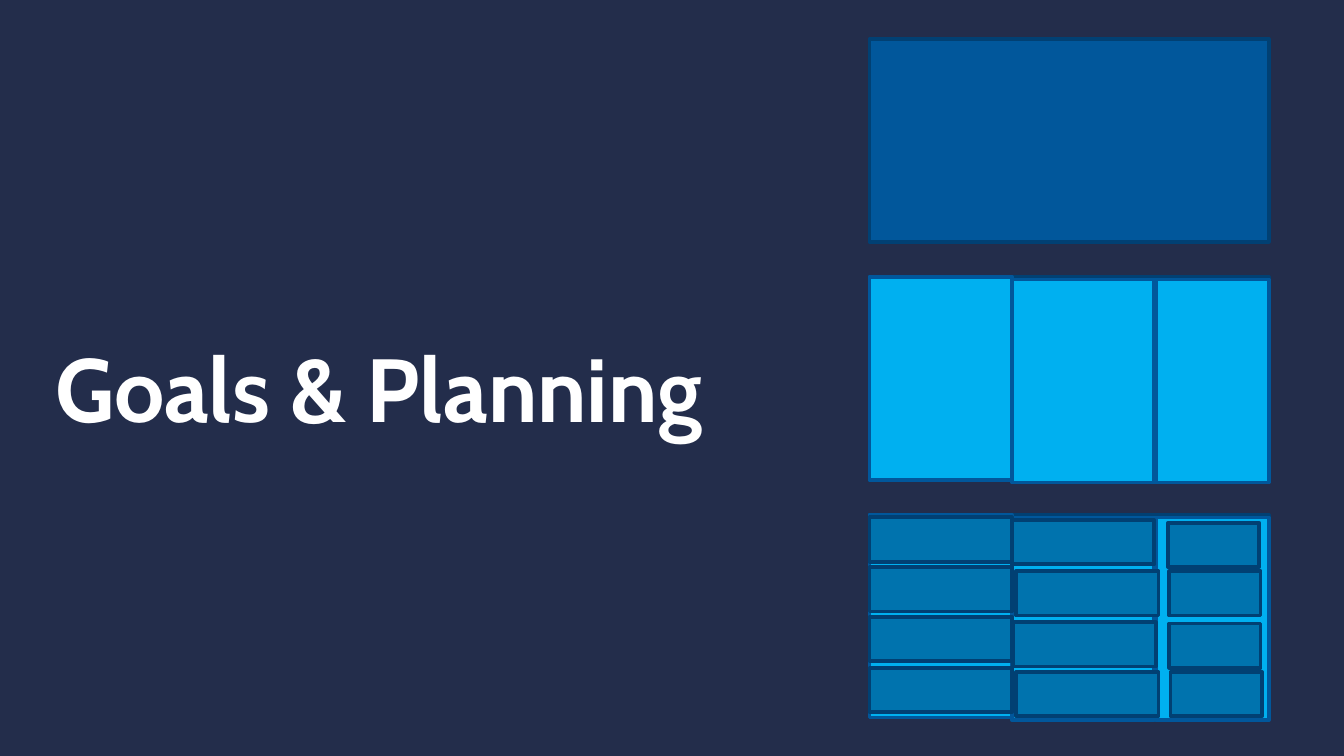
"""Build the "Goals & Planning" section slide with its three-level breakdown diagram."""
from pptx import Presentation
from pptx.dml.color import RGBColor
from pptx.enum.shapes import MSO_SHAPE
from pptx.enum.text import MSO_ANCHOR, MSO_AUTO_SIZE, PP_ALIGN
from pptx.util import Pt

TITLE = "Goals & Planning"
TITLE_BOX = (22.32, 56.16, 671.76, 301.68)

THEME = {
    "font": "Cabin", "title_size": 48, "line_width": 2,
    "background": "232D4B", "title": "FFFFFF",
    "goal": ("01579B", "014073"),
    "phase": ("00B0F0", "01579B"),
    "task": ("0073AE", "014073"),
}

PANEL_LEFT, PANEL_TOP, PANEL_STEP = 465.84, 20.88, 127.44
PANEL_WIDTH, PANEL_HEIGHT = 213.84, 108.72
PANEL_COUNT = 3
TASK_HEIGHT = 23.76

PHASES = [(0, 0, 76.32), (76.32, 1.44, 76.32), (153.36, 1.44, 60.48)]

TASK_COLUMNS = [
    (76.32, [(0, 1.44), (0, 28.08), (0, 54.72), (0, 82.08)]),
    (76.32, [(76.32, 2.88), (78.48, 30.24), (77.04, 57.6), (78.48, 84.24)]),
    (48.96, [(159.84, 4.32), (160.56, 30.24), (160.56, 58.32), (161.28, 84.24)]),
]


def color(name):
    return RGBColor.from_string(name)


def add_block(slide, level, left, top, width, height):
    fill, line = THEME[level]
    sp = slide.shapes.add_shape(
        MSO_SHAPE.RECTANGLE, Pt(left), Pt(top), Pt(width), Pt(height))
    sp.shadow.inherit = False
    sp.fill.solid()
    sp.fill.fore_color.rgb = color(fill)
    sp.line.color.rgb = color(line)
    sp.line.width = Pt(THEME["line_width"])


def add_title(slide):
    sp = slide.shapes.title
    sp.left, sp.top, sp.width, sp.height = map(Pt, TITLE_BOX)
    tf = sp.text_frame
    tf.text = TITLE
    tf.word_wrap = True
    tf.auto_size = MSO_AUTO_SIZE.NONE
    tf.vertical_anchor = MSO_ANCHOR.MIDDLE
    tf.margin_left = tf.margin_right = tf.margin_top = tf.margin_bottom = Pt(7.2)
    p = tf.paragraphs[0]
    p.alignment = PP_ALIGN.LEFT
    font = p.runs[0].font
    font.name, font.size, font.bold = THEME["font"], Pt(THEME["title_size"]), True
    font.color.rgb = color(THEME["title"])


def main():
    prs = Presentation()
    prs.slide_width, prs.slide_height = Pt(720), Pt(405)
    slide = prs.slides.add_slide(prs.slide_layouts[5])
    slide.background.fill.solid()
    slide.background.fill.fore_color.rgb = color(THEME["background"])
    add_title(slide)

    panel_tops = [PANEL_TOP + i * PANEL_STEP for i in range(PANEL_COUNT)]
    for top in panel_tops:
        add_block(slide, "goal", PANEL_LEFT, top, PANEL_WIDTH, PANEL_HEIGHT)
    for top in panel_tops[1:]:
        for dx, dy, width in PHASES:
            add_block(slide, "phase", PANEL_LEFT + dx, top + dy, width, PANEL_HEIGHT)
    for width, offsets in TASK_COLUMNS:
        for dx, dy in offsets:
            add_block(slide, "task", PANEL_LEFT + dx, panel_tops[-1] + dy,
                      width, TASK_HEIGHT)

    prs.save("out.pptx")


if __name__ == "__main__":
    main()
